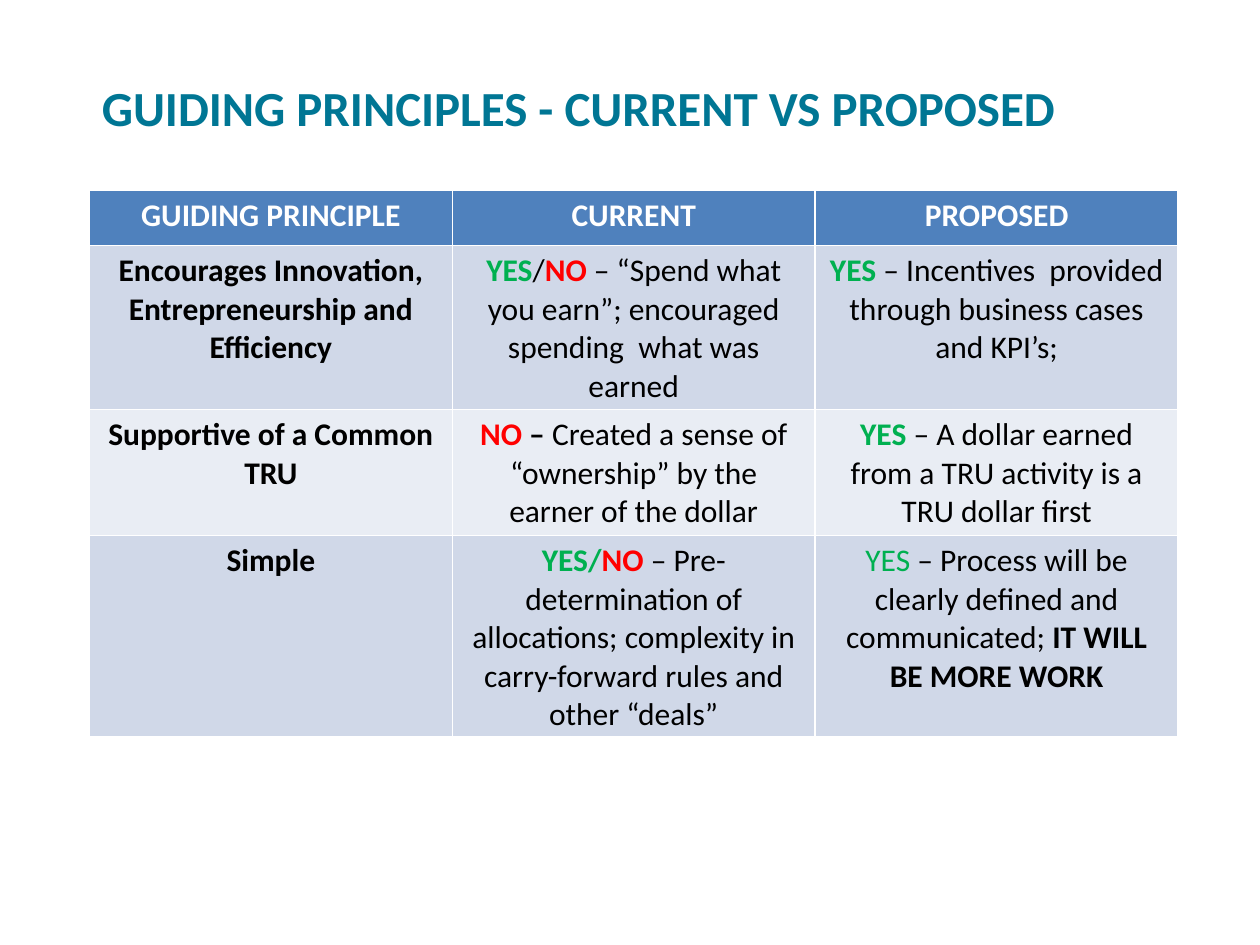
from pptx import Presentation
from pptx.dml.color import RGBColor
from pptx.enum.text import MSO_AUTO_SIZE, PP_ALIGN
from pptx.util import Inches, Pt

COLORS = {
    "title": "007694",
    "header": "4F81BD",
    "odd_row": "D0D8E8",
    "even_row": "E9EDF4",
    "white": "FFFFFF",
    "black": "000000",
    "yes": "00B050",
    "no": "FF0000",
}
FONT = "Calibri"
LEFT = 0.71
COLUMN_WIDTH = 2.88
ROW_HEIGHT = 0.44

HEADINGS = ["GUIDING PRINCIPLE", "CURRENT", "PROPOSED"]
PRINCIPLES = [
    [
        [("Encourages Innovation, Entrepreneurship and Efficiency", "black", True)],
        [
            ("YES", "yes", True),
            ("/", "black", False),
            ("NO", "no", True),
            (" – “Spend what you earn”; encouraged spending  what was earned", "black", False),
        ],
        [
            ("YES ", "yes", True),
            ("– Incentives  provided through business cases and KPI’s;", "black", False),
        ],
    ],
    [
        [("Supportive of a Common TRU", "black", True)],
        [
            ("NO ", "no", True),
            ("– ", "black", True),
            ("Created a sense of “ownership” by the earner of the dollar", "black", False),
        ],
        [
            ("YES", "yes", True),
            (" – A dollar earned from a TRU activity is a TRU dollar first", "black", False),
        ],
    ],
    [
        [("Simple", "black", True)],
        [
            ("YES/", "yes", True),
            ("NO ", "no", True),
            ("– Pre-determination of allocations; complexity in carry-forward rules "
             "and other “deals”", "black", False),
        ],
        [
            ("YES ", "yes", False),
            ("– Process will be clearly defined and communicated; ", "black", False),
            ("IT WILL BE MORE WORK", "black", True),
        ],
    ],
]


def color(name):
    """Return the named colour."""
    return RGBColor.from_string(COLORS[name])


def set_font(font, size, color_name, bold):
    """Set the look of a whole paragraph."""
    font.name = FONT
    font.size = Pt(size)
    font.color.rgb = color(color_name)
    font.bold = bold


def add_title(slide, text):
    """Add the slide title."""
    shape = slide.shapes.add_textbox(Inches(LEFT), Inches(0.57), Inches(9.29), Inches(0.57))
    shape.text_frame.word_wrap = True
    shape.text_frame.auto_size = MSO_AUTO_SIZE.SHAPE_TO_FIT_TEXT
    paragraph = shape.text_frame.paragraphs[0]
    paragraph.text = text
    paragraph.space_after = Pt(6)
    set_font(paragraph.font, 28, "title", True)


def fill_cell(cell, runs, fill_name):
    """Write centred runs into a cell and colour its background."""
    cell.fill.solid()
    cell.fill.fore_color.rgb = color(fill_name)
    paragraph = cell.text_frame.paragraphs[0]
    paragraph.alignment = PP_ALIGN.CENTER
    _, first_color, first_bold = runs[0]
    set_font(paragraph.font, 18, first_color, first_bold)
    for text, color_name, bold in runs:
        run = paragraph.add_run()
        run.text = text
        set_font(run.font, 18, color_name, bold)


def add_principles_table(slide):
    """Add the comparison table, whose rows grow with their text."""
    rows = [[[(heading, "white", True)] for heading in HEADINGS]] + PRINCIPLES
    table = slide.shapes.add_table(
        len(rows), len(HEADINGS), Inches(LEFT), Inches(1.51),
        Inches(COLUMN_WIDTH * len(HEADINGS)), Inches(ROW_HEIGHT * len(rows)),
    ).table
    for row_index, row in enumerate(rows):
        if row_index == 0:
            fill_name = "header"
        else:
            fill_name = "odd_row" if row_index % 2 else "even_row"
        for column_index, runs in enumerate(row):
            fill_cell(table.cell(row_index, column_index), runs, fill_name)


def main():
    """Build and save the slide."""
    presentation = Presentation()
    presentation.slide_width = Inches(10)
    presentation.slide_height = Inches(7.5)
    slide = presentation.slides.add_slide(presentation.slide_layouts[6])
    add_title(slide, "GUIDING PRINCIPLES - CURRENT VS PROPOSED")
    add_principles_table(slide)
    presentation.save("out.pptx")


if __name__ == "__main__":
    main()
